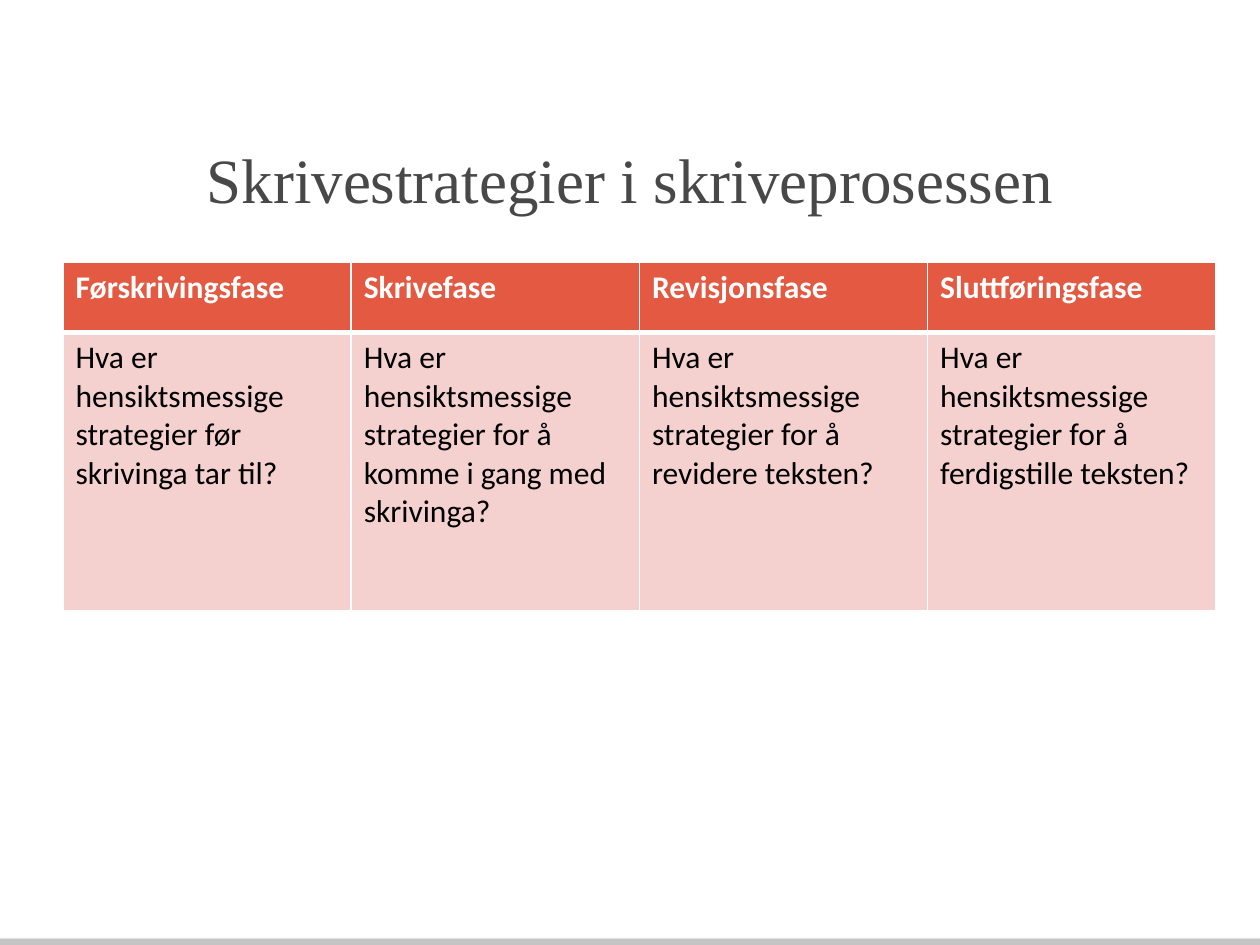
"""Build a slide with a table of writing strategies for each phase of writing."""
from lxml import etree
from pptx import Presentation
from pptx.dml.color import RGBColor
from pptx.enum.shapes import MSO_SHAPE
from pptx.enum.text import MSO_ANCHOR, PP_ALIGN
from pptx.util import Inches, Pt

RECTANGLE = MSO_SHAPE.RECTANGLE
MIDDLE = MSO_ANCHOR.MIDDLE
CENTER = PP_ALIGN.CENTER
NAMESPACE = "http://schemas.openxmlformats.org/drawingml/2006/main"
COLORS = {
    "bar": "C5C4C4",
    "title": "484848",
    "header": "E35941",
    "body": "F4D1CF",
    "white": "FFFFFF",
    "black": "000000",
}
PHASES = [
    ("Førskrivingsfase", "før skrivinga tar til?"),
    ("Skrivefase", "for å komme i gang med skrivinga?"),
    ("Revisjonsfase", "for å revidere teksten?"),
    ("Sluttføringsfase", "for å ferdigstille teksten?"),
]


def style_font(font, name, size, color, bold=False):
    font.name = name
    font.size = Pt(size)
    font.bold = bold
    font.color.rgb = RGBColor.from_string(COLORS[color])


def set_borders(cell, widths):
    properties = cell._tc.get_or_add_tcPr()
    for index, (side, width) in enumerate(widths.items()):
        line = etree.fromstring(
            f'<a:ln{side} xmlns:a="{NAMESPACE}" w="{Pt(width)}"><a:solidFill>'
            f'<a:srgbClr val="{COLORS["white"]}"/></a:solidFill></a:ln{side}>'
        )
        properties.insert(index, line)


deck = Presentation()
deck.slide_width = Inches(10)
deck.slide_height = Inches(7.5)
page = deck.slides.add_slide(deck.slide_layouts[5])

bar = page.shapes.add_shape(RECTANGLE, 0, Inches(7.45), Inches(10.08), Inches(0.05))
bar.fill.solid()
bar.fill.fore_color.rgb = RGBColor.from_string(COLORS["bar"])
bar.line.fill.background()
bar.shadow.inherit = False
effects = bar._element.spPr.find(f"{{{NAMESPACE}}}effectLst")
effects.append(etree.fromstring(
    f'<a:outerShdw xmlns:a="{NAMESPACE}" blurRad="{Pt(3.1)}" dist="{Pt(1.6)}" '
    f'dir="5400000" rotWithShape="0"><a:srgbClr val="{COLORS["black"]}">'
    '<a:alpha val="38000"/></a:srgbClr></a:outerShdw>'
))

title = page.shapes.title
title.left, title.top = Inches(0.5), Inches(0.75)
title.width, title.height = Inches(9), Inches(1.33)
title.text_frame.text = "Skrivestrategier i skriveprosessen"
title.text_frame.vertical_anchor = MIDDLE
heading = title.text_frame.paragraphs[0]
heading.alignment = CENTER
style_font(heading.runs[0].font, "Times New Roman", 36, "title")

table = page.shapes.add_table(
    2, len(PHASES), Inches(0.5), Inches(2.08), Inches(9.15), Inches(2.77)
).table
table.rows[0].height = Inches(0.56)
table.rows[1].height = Inches(2.21)

for column, (phase, question) in enumerate(PHASES):
    texts = [phase, f"Hva er hensiktsmessige strategier {question}"]
    for row, text in enumerate(texts):
        is_header = row == 0
        cell = table.cell(row, column)
        cell.text_frame.text = text
        span = cell.text_frame.paragraphs[0].runs[0]
        style_font(span.font, "Calibri", 18, "white" if is_header else "black", is_header)
        cell.fill.solid()
        fill_color = COLORS["header" if is_header else "body"]
        cell.fill.fore_color.rgb = RGBColor.from_string(fill_color)
        top, bottom = (1, 3) if is_header else (3, 1)
        set_borders(cell, {"L": 1, "R": 1, "T": top, "B": bottom})

deck.save("out.pptx")
